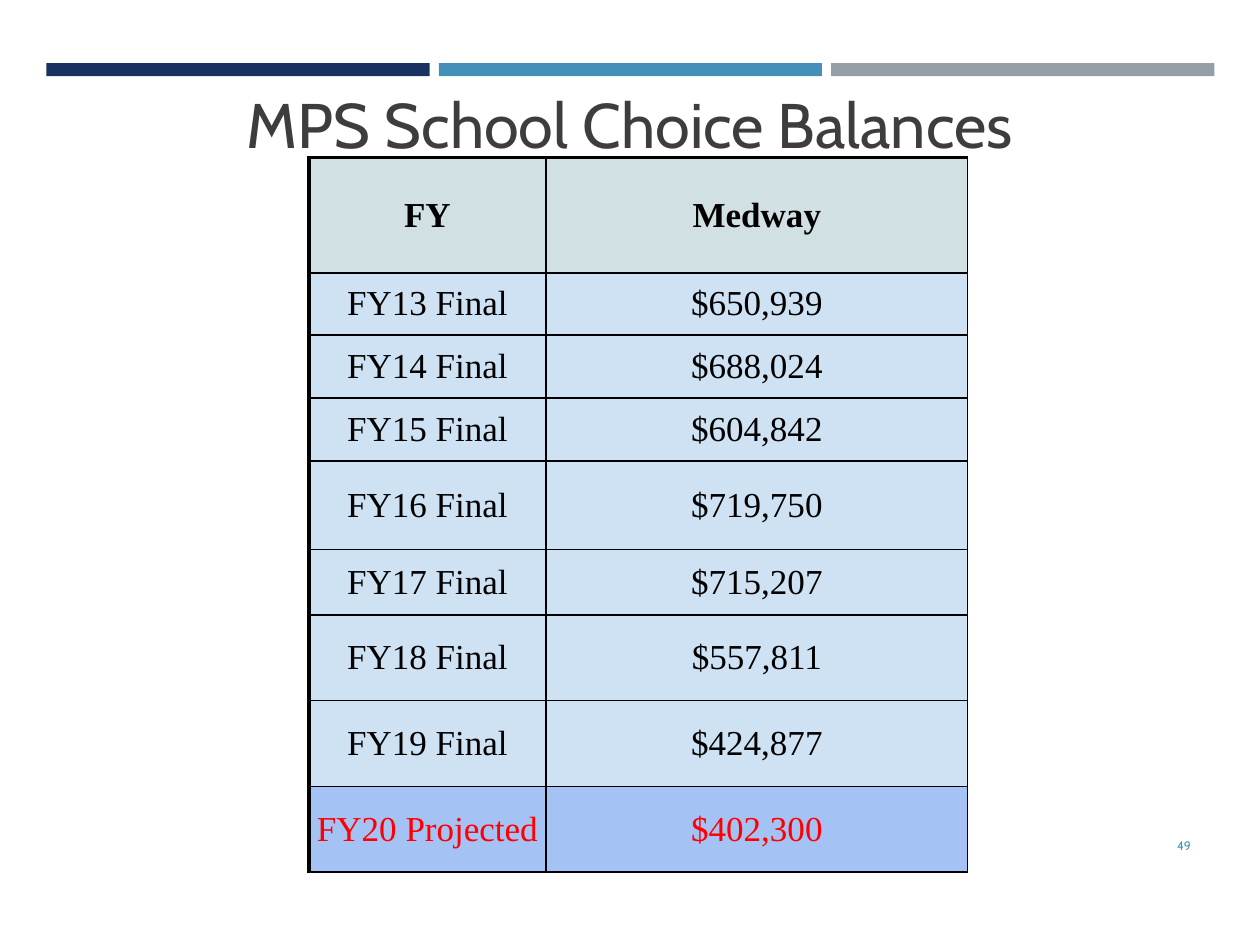
from lxml import etree
from pptx import Presentation
from pptx.dml.color import RGBColor
from pptx.enum import shapes, text
from pptx.oxml import ns
from pptx.util import Pt

TITLE = "MPS School Choice Balances"
PAGE_NUMBER = "49"
BALANCES = [
    ("FY", "Medway", 66),
    ("FY13 Final", "$650,939", 35.5),
    ("FY14 Final", "$688,024", 36),
    ("FY15 Final", "$604,842", 36),
    ("FY16 Final", "$719,750", 50.5),
    ("FY17 Final", "$715,207", 37.5),
    ("FY18 Final", "$557,811", 49),
    ("FY19 Final", "$424,877", 49),
    ("FY20 Projected", "$402,300", 49),
]
COLORS = {
    "navy": "1A3260", "blue": "4590B8", "gray": "969FA7",
    "title": "3D3D3D", "black": "000000", "red": "FF0000",
    "header": "D0E0E3", "body": "CFE2F3", "projected": "A4C2F4",
}
BARS = ("navy", "blue", "gray")
BAR_LEFT, BAR_TOP, BAR_WIDTH, BAR_HEIGHT, BAR_STEP = 26.5, 36, 219, 7.5, 224.25
TABLE_LEFT, TABLE_TOP = 176.5, 90
COLUMN_WIDTHS = (135.5, 241)
THIN, THICK = 1, 2.25

TITLE_FONT = {"name": "Cabin", "size": Pt(36), "bold": False}
NUMBER_FONT = {"name": "Cabin", "size": Pt(7)}
TABLE_FONT = {"name": "Times New Roman", "size": Pt(20)}
TITLE_FRAME = {
    "margin_left": Pt(7.2), "margin_right": Pt(7.2),
    "margin_top": Pt(3.6), "margin_bottom": Pt(3.6),
    "vertical_anchor": text.MSO_ANCHOR.MIDDLE,
    "word_wrap": True, "auto_size": text.MSO_AUTO_SIZE.NONE,
}
NUMBER_FRAME = {
    **TITLE_FRAME,
    "margin_left": Pt(5), "margin_right": Pt(5),
    "margin_top": Pt(3), "margin_bottom": Pt(3),
}
CELL_FRAME = {
    "margin_left": 0, "margin_right": 0,
    "margin_top": Pt(3.6), "margin_bottom": Pt(3.6),
    "vertical_anchor": text.MSO_ANCHOR.MIDDLE,
}


def apply(target, values):
    for name, value in values.items():
        setattr(target, name, value)


def paint(fill, color):
    fill.solid()
    fill.fore_color.rgb = RGBColor.from_string(COLORS[color])


def write(frame, content, font, color, alignment):
    paragraph = frame.paragraphs[0]
    paragraph.alignment = alignment
    run = paragraph.add_run()
    run.text = content
    apply(run.font, font)
    run.font.color.rgb = RGBColor.from_string(COLORS[color])


def place(shape, left, top, width, height):
    apply(shape, {"left": Pt(left), "top": Pt(top), "width": Pt(width), "height": Pt(height)})


def add_borders(cell, widths):
    properties = cell._tc.get_or_add_tcPr()
    for index, (side, width) in enumerate(widths.items()):
        line = etree.Element(ns.qn(f"a:ln{side}"), w=str(Pt(width)))
        fill = etree.SubElement(line, ns.qn("a:solidFill"))
        etree.SubElement(fill, ns.qn("a:srgbClr"), val=COLORS["black"])
        properties.insert(index, line)


def add_bars(slide):
    for index, color in enumerate(BARS):
        left = BAR_LEFT + index * BAR_STEP
        bar = slide.shapes.add_shape(
            shapes.MSO_SHAPE.RECTANGLE, Pt(left), Pt(BAR_TOP), Pt(BAR_WIDTH), Pt(BAR_HEIGHT))
        bar.shadow.inherit = False
        bar.line.fill.background()
        paint(bar.fill, color)


def add_balances(slide):
    heights = [height for _, _, height in BALANCES]
    table = slide.shapes.add_table(
        len(BALANCES), len(COLUMN_WIDTHS), Pt(TABLE_LEFT), Pt(TABLE_TOP),
        Pt(sum(COLUMN_WIDTHS)), Pt(sum(heights))).table
    for column, width in zip(table.columns, COLUMN_WIDTHS):
        column.width = Pt(width)
    last = len(BALANCES) - 1
    for row_index, (year, balance, height) in enumerate(BALANCES):
        table.rows[row_index].height = Pt(height)
        header, projected = row_index == 0, row_index == last
        fill = "header" if header else "projected" if projected else "body"
        for column_index, content in enumerate((year, balance)):
            cell = table.cell(row_index, column_index)
            apply(cell, CELL_FRAME)
            paint(cell.fill, fill)
            write(cell.text_frame, content, {**TABLE_FONT, "bold": header},
                  "red" if projected else "black", text.PP_ALIGN.CENTER)
            add_borders(cell, {
                "L": THICK if column_index == 0 else THIN, "R": THIN,
                "T": THICK if header else THIN, "B": THIN,
            })


def main():
    presentation = Presentation()
    apply(presentation, {"slide_width": Pt(720), "slide_height": Pt(540)})
    slide = presentation.slides.add_slide(presentation.slide_layouts[5])
    add_bars(slide)
    add_balances(slide)

    title = slide.shapes.title
    place(title, 36, 34, 648, 73.5)
    apply(title.text_frame, TITLE_FRAME)
    write(title.text_frame, TITLE, TITLE_FONT, "title", text.PP_ALIGN.CENTER)

    number = slide.shapes.add_textbox(Pt(623.5), Pt(468.5), Pt(62), Pt(29))
    apply(number.text_frame, NUMBER_FRAME)
    write(number.text_frame, PAGE_NUMBER, NUMBER_FONT, "blue", text.PP_ALIGN.RIGHT)

    presentation.save("out.pptx")


if __name__ == "__main__":
    main()
